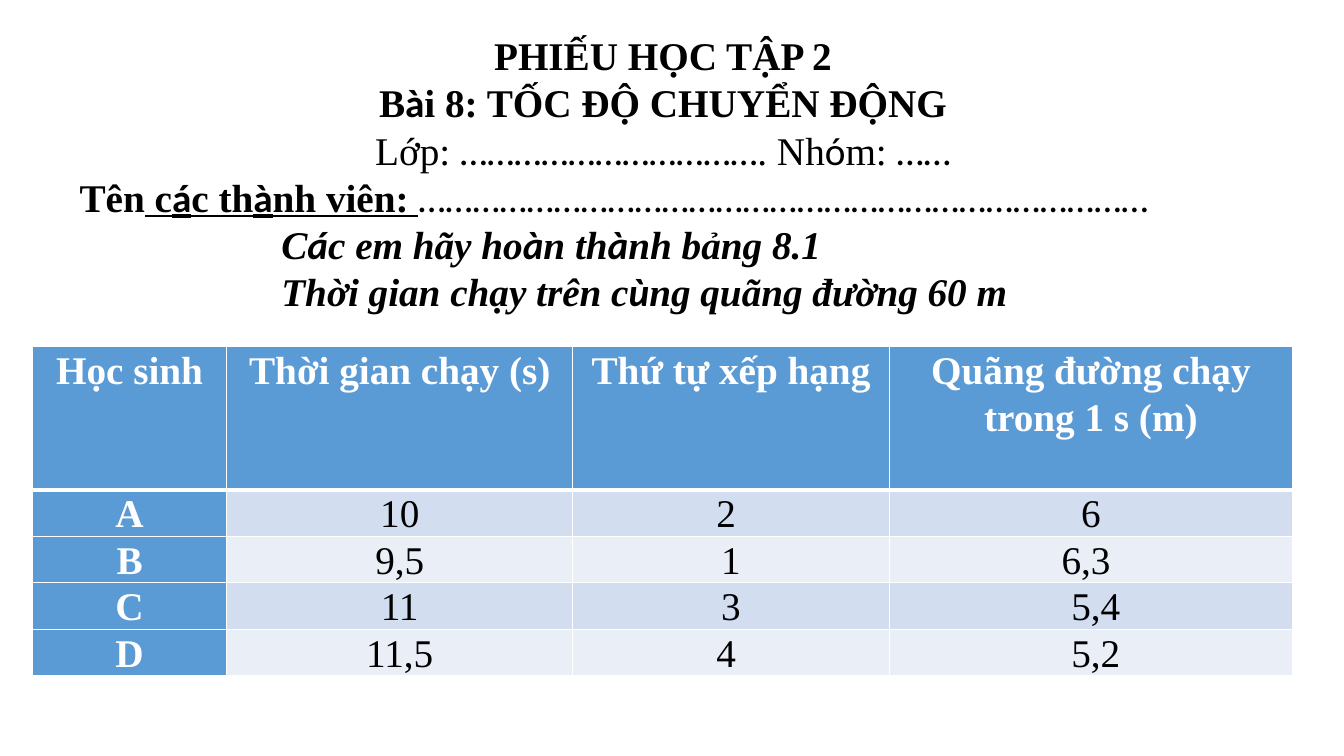
"""Build a physics worksheet slide with a heading block and a running-time table."""
from dataclasses import dataclass
from itertools import groupby

from lxml.etree import SubElement
from pptx import Presentation
from pptx.dml.color import RGBColor as Rgb
from pptx.enum.text import MSO_ANCHOR as Anchor, MSO_AUTO_SIZE as AutoSize, PP_ALIGN as Align
from pptx.oxml.ns import qn
from pptx.util import Inches, Pt


@dataclass(frozen=True)
class Theme:
    serif: str = "Times New Roman"
    sans: str = "Calibri"
    size: int = 28
    ink: str = "000000"
    paper: str = "FFFFFF"
    accent: str = "5B9BD5"
    bands: tuple = ("D2DEEF", "EAEFF7")
    rule: int = 1
    header_rule: int = 3


THEME = Theme()
SANS_LETTERS = "àáóù…"

HEADING = [
    (Align.CENTER, 0, [("PHIẾU HỌC TẬP 2", "b")]),
    (Align.CENTER, 0, [("Bài 8: TỐC ĐỘ CHUYỂN ĐỘNG", "b")]),
    (Align.CENTER, 0, [("Lớp: " + "…" * 11 + ". Nhóm: ……", "")]),
    (Align.LEFT, 0, [("Tên", "b"), (" các thành viên: ", "bu"), ("…" * 27, "")]),
    (Align.LEFT, 2, [("Các em hãy hoàn thành bảng 8.1", "bi")]),
    (Align.LEFT, 0, [("Thời gian chạy trên cùng quãng đường 60 m", "bi")]),
]
RESULTS = [
    ("Học sinh", "Thời gian chạy (s)", "Thứ tự xếp hạng", "Quãng đường chạy trong 1 s (m)"),
    ("A", "10", "2 ", "6"),
    ("B", "9,5", "1", "6,3 "),
    ("C", "11", "3", " 5,4"),
    ("D", "11,5", "4 ", " 5,2"),
]
SLIDE = (13.33, 7.5)
HEADING_BOX = (0.69, 0.25, 11.77, 2.93)
TABLE_CORNER = (0.32, 3.44)
COLUMNS = (1.93, 3.43, 3.14, 4)
HEADER_HEIGHT, ROW_HEIGHT = 1.42, 0.34
CELL_MARGIN = 0.07


def add_run(paragraph, text, font_name, color, style):
    run = paragraph.add_run()
    run.text = text
    font = run.font
    font.name, font.size = font_name, Pt(THEME.size)
    font.color.rgb = Rgb.from_string(color)
    font.bold, font.italic, font.underline = ("b" in style, "i" in style, "u" in style)


def add_border(cell, side, width):
    line = SubElement(cell._tc.get_or_add_tcPr(), qn(f"a:ln{side}"), w=str(Pt(width)))
    fill = SubElement(line, qn("a:solidFill"))
    SubElement(fill, qn("a:srgbClr"), val=THEME.paper)


def fill_heading(heading):
    heading.left, heading.top, heading.width, heading.height = map(Inches, HEADING_BOX)
    frame = heading.text_frame
    frame.word_wrap, frame.auto_size = True, AutoSize.NONE
    frame.vertical_anchor = Anchor.MIDDLE
    for index, (alignment, indent, pieces) in enumerate(HEADING):
        paragraph = frame.add_paragraph() if index else frame.paragraphs[0]
        paragraph.alignment = alignment
        if indent:
            paragraph._p.get_or_add_pPr().set("marL", str(Inches(indent)))
        for text, style in pieces:
            for is_sans, letters in groupby(text, lambda letter: letter in SANS_LETTERS):
                font_name = THEME.sans if is_sans else THEME.serif
                add_run(paragraph, "".join(letters), font_name, THEME.ink, style)


def fill_cell(cell, text, row, column):
    is_label = row == 0 or column == 0
    for side in "LRTB":
        under_header = (row, side) in ((0, "B"), (1, "T"))
        add_border(cell, side, THEME.header_rule if under_header else THEME.rule)
    cell.fill.solid()
    background = THEME.accent if is_label else THEME.bands[(row - 1) % 2]
    cell.fill.fore_color.rgb = Rgb.from_string(background)
    cell.margin_left = cell.margin_right = Inches(CELL_MARGIN)
    cell.margin_top = cell.margin_bottom = 0
    paragraph = cell.text_frame.paragraphs[0]
    paragraph.alignment, paragraph.line_spacing = Align.CENTER, 1.07
    color = THEME.paper if is_label else THEME.ink
    add_run(paragraph, text, THEME.serif, color, "b" if is_label else "")


def add_results(slide):
    heights = [HEADER_HEIGHT] + [ROW_HEIGHT] * (len(RESULTS) - 1)
    extent = (*TABLE_CORNER, sum(COLUMNS), sum(heights))
    results = slide.shapes.add_table(len(RESULTS), len(COLUMNS), *map(Inches, extent)).table
    results.first_col = True
    for column, width in zip(results.columns, COLUMNS):
        column.width = Inches(width)
    for row, (values, height) in enumerate(zip(RESULTS, heights)):
        results.rows[row].height = Inches(height)
        for column, text in enumerate(values):
            fill_cell(results.cell(row, column), text, row, column)


def main():
    deck = Presentation()
    deck.slide_width, deck.slide_height = map(Inches, SLIDE)
    slide = deck.slides.add_slide(deck.slide_layouts.get_by_name("Title Only"))
    fill_heading(slide.shapes.title)
    add_results(slide)
    deck.save("out.pptx")


if __name__ == "__main__":
    main()
